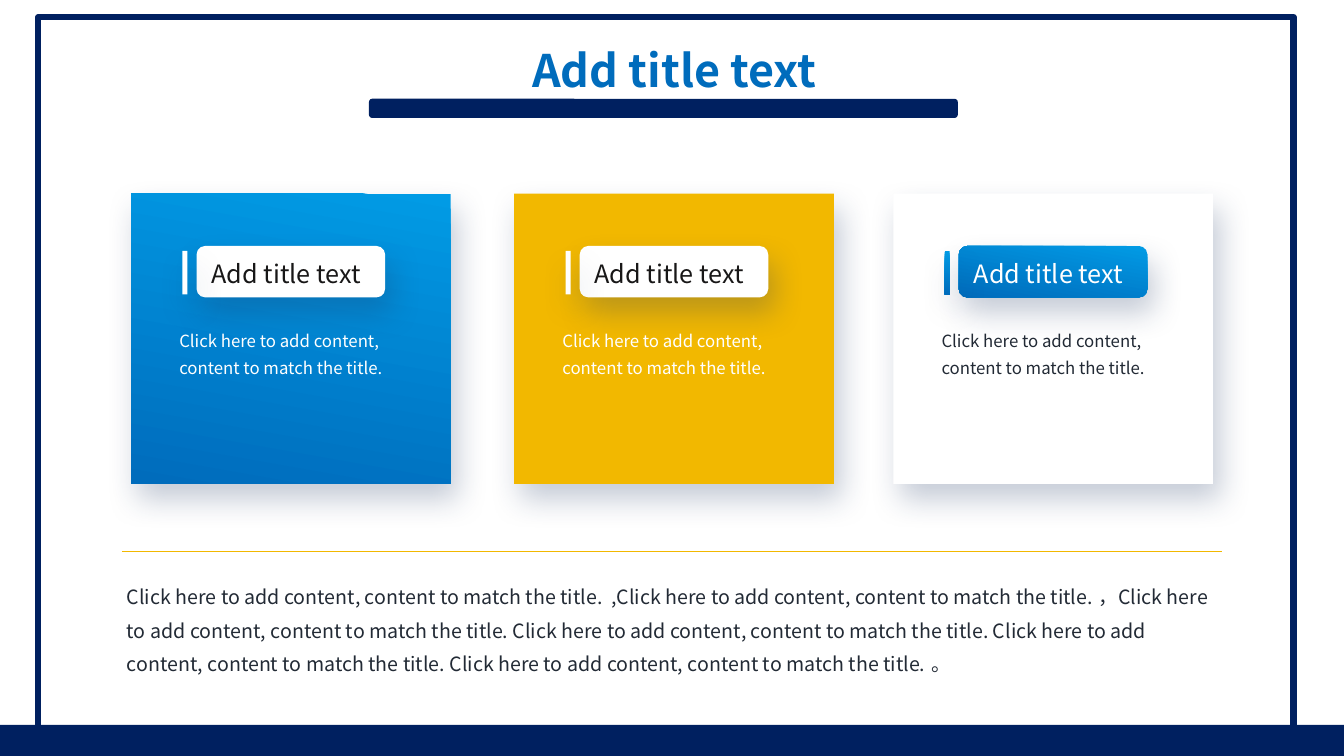
from lxml import etree
from pptx import Presentation
from pptx.dml.color import RGBColor
from pptx.enum.shapes import MSO_CONNECTOR, MSO_SHAPE
from pptx.enum.text import MSO_AUTO_SIZE, PP_ALIGN
from pptx.oxml import parse_xml
from pptx.oxml.ns import nsdecls, qn
from pptx.util import Emu, Pt

FONT = "Noto Sans CJK SC"
NAVY, BLUE, SKY, GOLD = "002060", "006CBC", "019BE5", "F2B800"
WHITE, BLACK, INK = "FFFFFF", "181717", "222A35"
GRADIENT = (SKY, BLUE)
HEADING = "Add title text"
SENTENCE = "Click here to add content, content to match the title."
SUMMARY = (f"{SENTENCE}  ,{SENTENCE} ，{SENTENCE} {SENTENCE} "
           f"{SENTENCE} {SENTENCE} 。")
CARDS = [
    (130, GRADIENT, WHITE, BLACK, WHITE),
    (510, GOLD, WHITE, BLACK, WHITE),
    (886, WHITE, GRADIENT, WHITE, INK),
]


def px(length):
    """Turn px, 100 to the inch, into EMU."""
    return Emu(length * 9144)


def rgb(color):
    """Turn a hex string into a colour."""
    return RGBColor.from_string(color)


def paint(fill, color):
    """Fill with one colour, or with a gradient of two, or leave clear."""
    if color is None:
        fill.background()
    elif isinstance(color, tuple):
        fill.gradient()
        fill.gradient_angle = 260
        for stop, position, tone in zip(fill.gradient_stops, (0, 1), color):
            stop.position = position
            stop.color.rgb = rgb(tone)
    else:
        fill.solid()
        fill.fore_color.rgb = rgb(color)


def cast_shadow(shape):
    """Give a shape the soft shadow of the cards."""
    effects = shape._element.spPr.find(qn("a:effectLst"))
    effects.append(parse_xml(
        f'<a:outerShdw {nsdecls("a")} blurRad="{Pt(22)}" dist="{Pt(12)}" '
        f'dir="{67 * 60000}" algn="t" rotWithShape="0">'
        '<a:srgbClr val="203864"><a:alpha val="26000"/></a:srgbClr>'
        '</a:outerShdw>'))


def add_block(slide, kind, box, color, shadow=False):
    """Place a preset shape without outline."""
    block = slide.shapes.add_shape(kind, *map(px, box))
    block.shadow.inherit = False
    paint(block.fill, color)
    block.line.fill.background()
    if shadow:
        cast_shadow(block)
    return block


def add_text(slide, box, text, size, color, spacing=None):
    """Place a wrapped text box and return its paragraph."""
    frame = slide.shapes.add_textbox(*map(px, box)).text_frame
    frame.word_wrap = True
    frame.auto_size = MSO_AUTO_SIZE.SHAPE_TO_FIT_TEXT
    paragraph = frame.paragraphs[0]
    paragraph.text = text
    paragraph.line_spacing = spacing
    paragraph.font.size = Pt(size)
    paragraph.font.name = FONT
    paragraph.font.color.rgb = rgb(color)
    return paragraph


def add_header(slide, left, top):
    """Place the slide title."""
    title = add_text(slide, (left, top, 374, 64), HEADING, 32, BLUE)
    title.alignment = PP_ALIGN.CENTER
    title.font.bold = True


def add_card(slide, left, top, card_color, label_color, label_ink, body_ink):
    """Place a card with its label, marker and text."""
    rect, rounded = MSO_SHAPE.RECTANGLE, MSO_SHAPE.ROUNDED_RECTANGLE
    add_block(slide, rect, (left, top, 317, 288), card_color, True)
    add_block(slide, rounded, (left + 65, top + 52, 187, 51), label_color, True)
    add_block(slide, rect, (left + 51, top + 57, 5, 43), label_color, True)
    add_text(slide, (left + 70, top + 50, 203, 46), HEADING, 18, label_ink, 1.32)
    add_text(slide, (left + 38, top + 125, 230, 61), SENTENCE, 12, body_ink, 1.32)


def add_summary(slide, left, top, width):
    """Place the closing paragraph under its dividing line."""
    add_text(slide, (left, top + 19, width, 140), SUMMARY, 14, INK, 1.42)
    divider = slide.shapes.add_connector(
        MSO_CONNECTOR.STRAIGHT, px(left + 5), px(top),
        px(left + width - 9), px(top))
    divider.line.color.rgb = rgb(GOLD)
    divider.line.width = Pt(0.75)
    etree.SubElement(divider._element.spPr, qn("a:effectLst"))


def add_frame(slide, box):
    """Place the border around the content."""
    border = add_block(slide, MSO_SHAPE.RECTANGLE, box, None)
    border.line.color.rgb = rgb(NAVY)
    border.line.width = Pt(4.5)


def main():
    """Build the slide and save it."""
    deck = Presentation()
    deck.slide_width, deck.slide_height = px(1333), px(750)
    slide = deck.slides.add_slide(deck.slide_layouts[6])
    add_block(slide, MSO_SHAPE.RECTANGLE, (0, 719, 1333, 31), NAVY)
    add_header(slide, 482, 37)
    for left, *colors in CARDS:
        add_card(slide, left, 192, *colors)
    add_summary(slide, 116, 547, 1105)
    add_block(slide, MSO_SHAPE.ROUNDED_RECTANGLE, (366, 98, 584, 19), NAVY)
    add_frame(slide, (38, 17, 1245, 717))
    deck.save("out.pptx")


if __name__ == "__main__":
    main()
